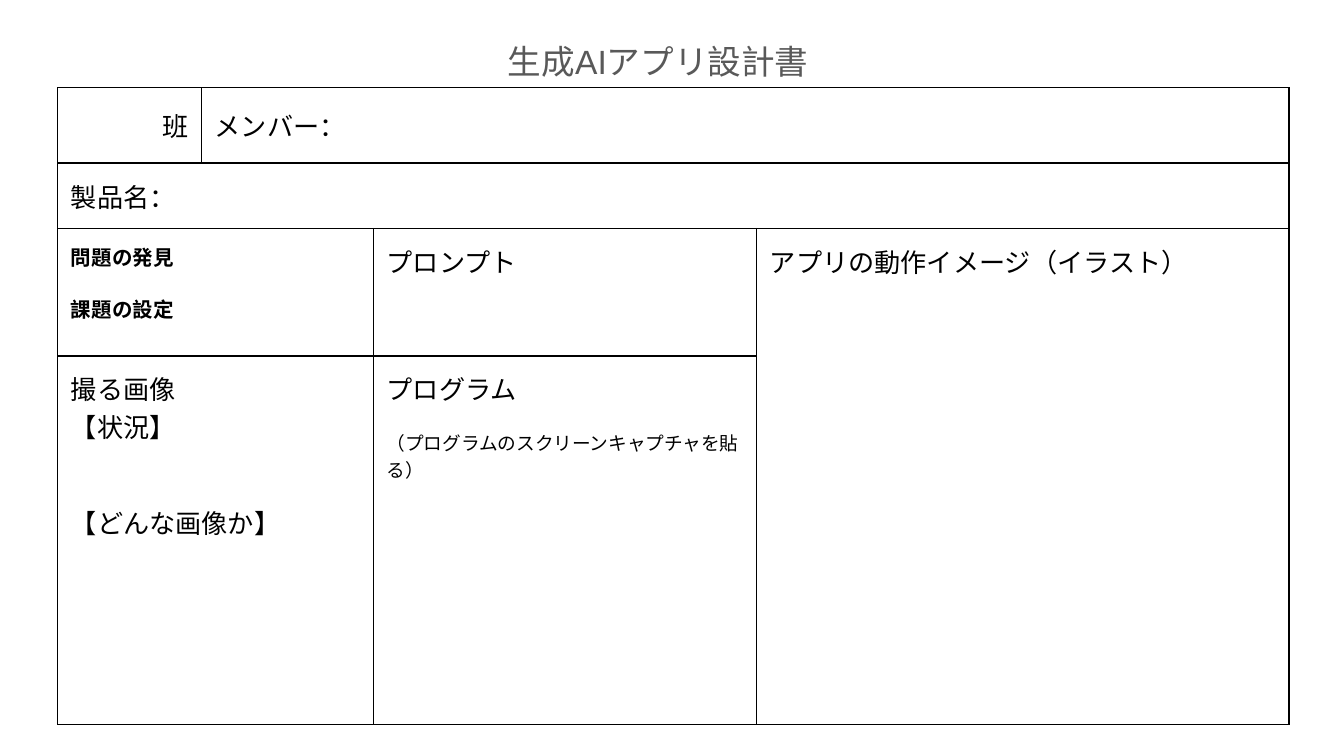
import pptx
import pptx.util
import pptx.dml.color
import pptx.enum.text
import pptx.oxml
import pptx.oxml.ns

Cm, Pt = pptx.util.Cm, pptx.util.Pt
ALIGN, ANCHOR = pptx.enum.text.PP_ALIGN, pptx.enum.text.MSO_ANCHOR
BLACK = pptx.dml.color.RGBColor(0x00, 0x00, 0x00)
GRAY = pptx.dml.color.RGBColor(0x59, 0x59, 0x59)
INSET = Cm(0.25)
BORDER_WIDTH = Pt(0.75)


def add_borders(cell):
    tcPr = cell._tc.get_or_add_tcPr()
    for i, side in enumerate(("lnL", "lnR", "lnT", "lnB")):
        tcPr.insert(i, pptx.oxml.parse_xml(
            f'<a:{side} {pptx.oxml.ns.nsdecls("a")} w="{BORDER_WIDTH}">'
            f'<a:solidFill><a:srgbClr val="{BLACK}"/></a:solidFill></a:{side}>'))


def write(tf, lines, color):
    """Fill a text frame with (text, size, bold, font, space before) lines."""
    for i, (text, size, bold, font, before) in enumerate(lines):
        p = tf.paragraphs[0] if i == 0 else tf.add_paragraph()
        p.text = text
        p.alignment = ALIGN.LEFT
        if before:
            p.space_before = Pt(before)
        for r in p.runs:
            r.font.size = Pt(size)
            r.font.bold = bold
            r.font.name = font
            r.font.color.rgb = color


prs = pptx.Presentation()
prs.slide_width, prs.slide_height = Cm(25.4), Cm(14.29)
s = prs.slides.add_slide(prs.slide_layouts[5])

# Title
title = s.shapes.title
title.left, title.top, title.width, title.height = Cm(9.35), Cm(0.53), Cm(6.73), Cm(1.14)
tf = title.text_frame
tf.auto_size = pptx.enum.text.MSO_AUTO_SIZE.NONE
tf.word_wrap = True
tf.vertical_anchor = ANCHOR.TOP
tf.margin_left = tf.margin_right = tf.margin_top = tf.margin_bottom = INSET
write(tf, [("生成AIアプリ設計書", 18, False, "Arial", 0)], GRAY)

# Worksheet table
col_widths = [2.72, 3.25, 7.24, 10.06]
row_heights = [1.42, 1.24, 2.41, 6.96]
table = s.shapes.add_table(len(row_heights), len(col_widths), Cm(1.09), Cm(1.66),
                           Cm(sum(col_widths)), Cm(sum(row_heights))).table
table.first_row = table.horz_banding = False
for column, width in zip(table.columns, col_widths):
    column.width = Cm(width)
for row, height in zip(table.rows, row_heights):
    row.height = Cm(height)

for cell in table.iter_cells():
    cell.margin_left = cell.margin_right = cell.margin_top = cell.margin_bottom = INSET
    cell.fill.background()
    add_borders(cell)

merges = [((0, 1), (0, 3)), ((1, 0), (1, 3)), ((2, 0), (2, 1)),
          ((3, 0), (3, 1)), ((2, 3), (3, 3))]
for first, last in merges:
    table.cell(*first).merge(table.cell(*last))

body = (14, False, "Arial")
heading = (11, True, "Calibri")
note = (10, False, "Arial")
contents = {
    (0, 0): [("班", *body, 0)],
    (0, 1): [("メンバー：", *body, 0)],
    (1, 0): [("製品名：", *body, 0)],
    (2, 0): [("問題の発見", *heading, 0), ("課題の設定", *heading, 11.5)],
    (2, 2): [("プロンプト", *body, 0)],
    (2, 3): [("アプリの動作イメージ（イラスト）", *body, 0)],
    (3, 0): [("撮る画像", *body, 0), ("【状況】", *body, 0), ("【どんな画像か】", *body, 31)],
    (3, 2): [("プログラム", *body, 0),
             ("（プログラムのスクリーンキャプチャを貼る）", *note, 11.5)],
}
for (row, col), lines in contents.items():
    cell = table.cell(row, col)
    cell.vertical_anchor = ANCHOR.MIDDLE if row < 2 else ANCHOR.TOP
    write(cell.text_frame, lines, BLACK)
table.cell(0, 0).text_frame.paragraphs[0].alignment = ALIGN.RIGHT

prs.save("out.pptx")
